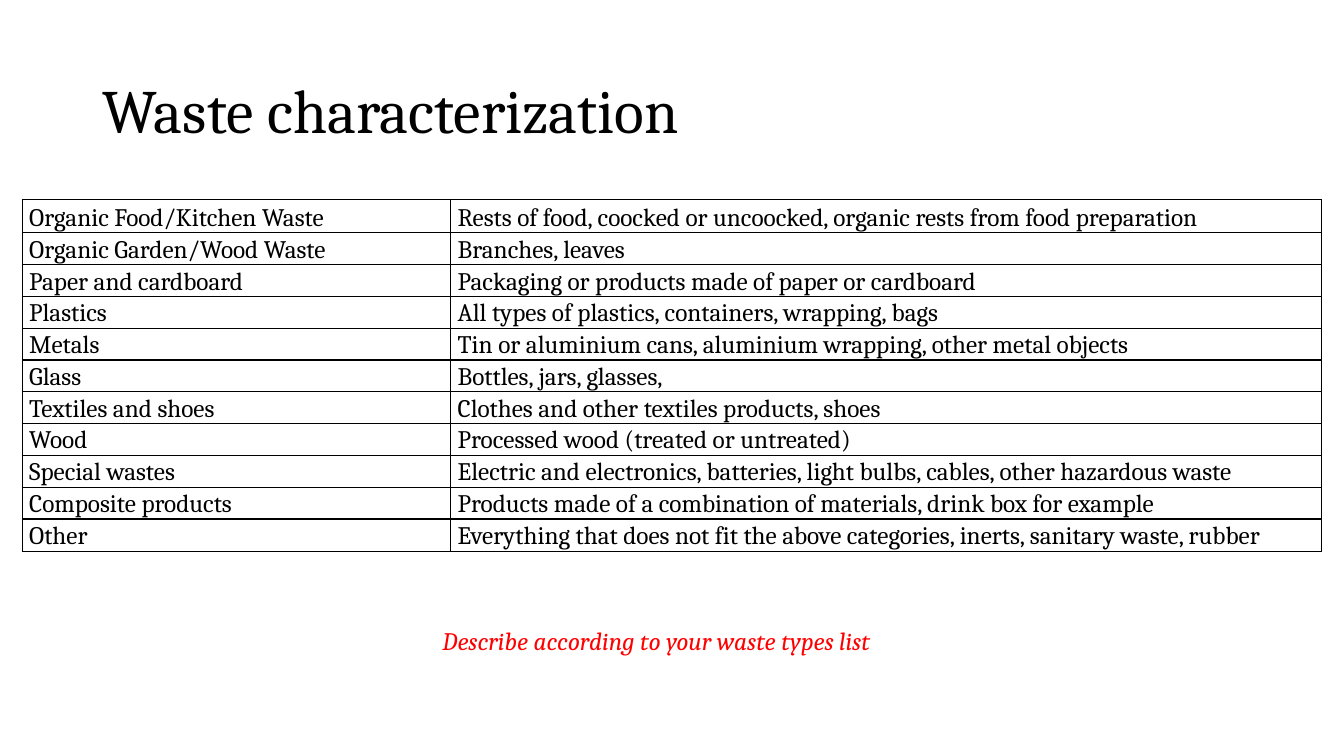
"""Build the waste characterization slide."""
from lxml import etree
from pptx import Presentation
from pptx.dml.color import RGBColor
from pptx.enum.text import MSO_ANCHOR
from pptx.oxml.ns import qn
from pptx.util import Inches, Pt

BLACK = RGBColor(0x00, 0x00, 0x00)
RED = RGBColor(0xFF, 0x00, 0x00)
MIDDLE, BOTTOM = MSO_ANCHOR.MIDDLE, MSO_ANCHOR.BOTTOM
TOP = MSO_ANCHOR.TOP
FONT = "Cambria"

COL_WIDTHS = (4.25, 8.64)
FIRST_ROW, ROW, LAST_ROW = 0.33, 0.31, 0.32
CELL_FORMAT = {
    "margin_left": Inches(0.07),
    "margin_right": Inches(0.07),
    "margin_top": 0,
    "margin_bottom": 0,
    "vertical_anchor": BOTTOM,
}
WASTES = [
    ("Organic Food/Kitchen Waste",
     "Rests of food, coocked or uncoocked, organic rests from food preparation"),
    ("Organic Garden/Wood Waste", "Branches, leaves"),
    ("Paper and cardboard", "Packaging or products made of paper or cardboard"),
    ("Plastics", "All types of plastics, containers, wrapping, bags"),
    ("Metals", "Tin or aluminium cans, aluminium wrapping, other metal objects"),
    ("Glass", "Bottles, jars, glasses,"),
    ("Textiles and shoes", "Clothes and other textiles products, shoes"),
    ("Wood", "Processed wood (treated or untreated)"),
    ("Special wastes",
     "Electric and electronics, batteries, light bulbs, cables, other hazardous waste"),
    ("Composite products",
     "Products made of a combination of materials, drink box for example"),
    ("Other",
     "Everything that does not fit the above categories, inerts, sanitary waste, rubber"),
]


def write(tf, text, size, color=BLACK, spacing=1.0, italic=False):
    """Write one formatted run into a text frame."""
    p = tf.paragraphs[0]
    p.line_spacing = spacing
    r = p.add_run()
    r.text = text
    values = {"name": FONT, "size": Pt(size), "italic": italic}
    for name, value in values.items():
        setattr(r.font, name, value)
    r.font.color.rgb = color


def add_text(s, box, text, size, anchor=TOP, **style):
    """Add a wrapped text box."""
    tf = s.shapes.add_textbox(*map(Inches, box)).text_frame
    tf.word_wrap = True
    tf.vertical_anchor = anchor
    write(tf, text, size, **style)


def set_borders(cell, color, width):
    """Draw a solid line on all four sides of a cell."""
    pr = cell._tc.get_or_add_tcPr()
    for i, side in enumerate(("lnL", "lnR", "lnT", "lnB")):
        ln = etree.Element(qn(f"a:{side}"), w=str(Pt(width)))
        fill = etree.SubElement(ln, qn("a:solidFill"))
        etree.SubElement(fill, qn("a:srgbClr"), val=str(color))
        pr.insert(i, ln)


def add_waste_table(s, left, top):
    """Add the bordered table of waste types and descriptions."""
    heights = [FIRST_ROW] + [ROW] * (len(WASTES) - 2) + [LAST_ROW]
    size = (len(WASTES), len(COL_WIDTHS))
    box = (left, top, sum(COL_WIDTHS), sum(heights))
    table = s.shapes.add_table(*size, *map(Inches, box)).table
    table.first_row = table.horz_banding = False
    for column, width in zip(table.columns, COL_WIDTHS):
        column.width = Inches(width)
    for row, height, texts in zip(table.rows, heights, WASTES):
        row.height = Inches(height)
        for cell, text in zip(row.cells, texts):
            for name, value in CELL_FORMAT.items():
                setattr(cell, name, value)
            cell.fill.background()
            set_borders(cell, BLACK, 1)
            write(cell.text_frame, text, 18, spacing=1.05)


def main():
    """Build and save the slide."""
    prs = Presentation()
    prs.slide_width, prs.slide_height = Inches(13.33), Inches(7.5)
    s = prs.slides.add_slide(prs.slide_layouts[6])
    add_text(s, (0.92, 0.4, 11.5, 1.45), "Waste characterization", 44,
             anchor=MIDDLE, spacing=0.9)
    add_waste_table(s, 0.22, 1.98)
    add_text(s, (4.29, 6.15, 4.75, 0.4),
             "Describe according to your waste types list", 18,
             color=RED, italic=True)
    prs.save("out.pptx")


if __name__ == "__main__":
    main()
